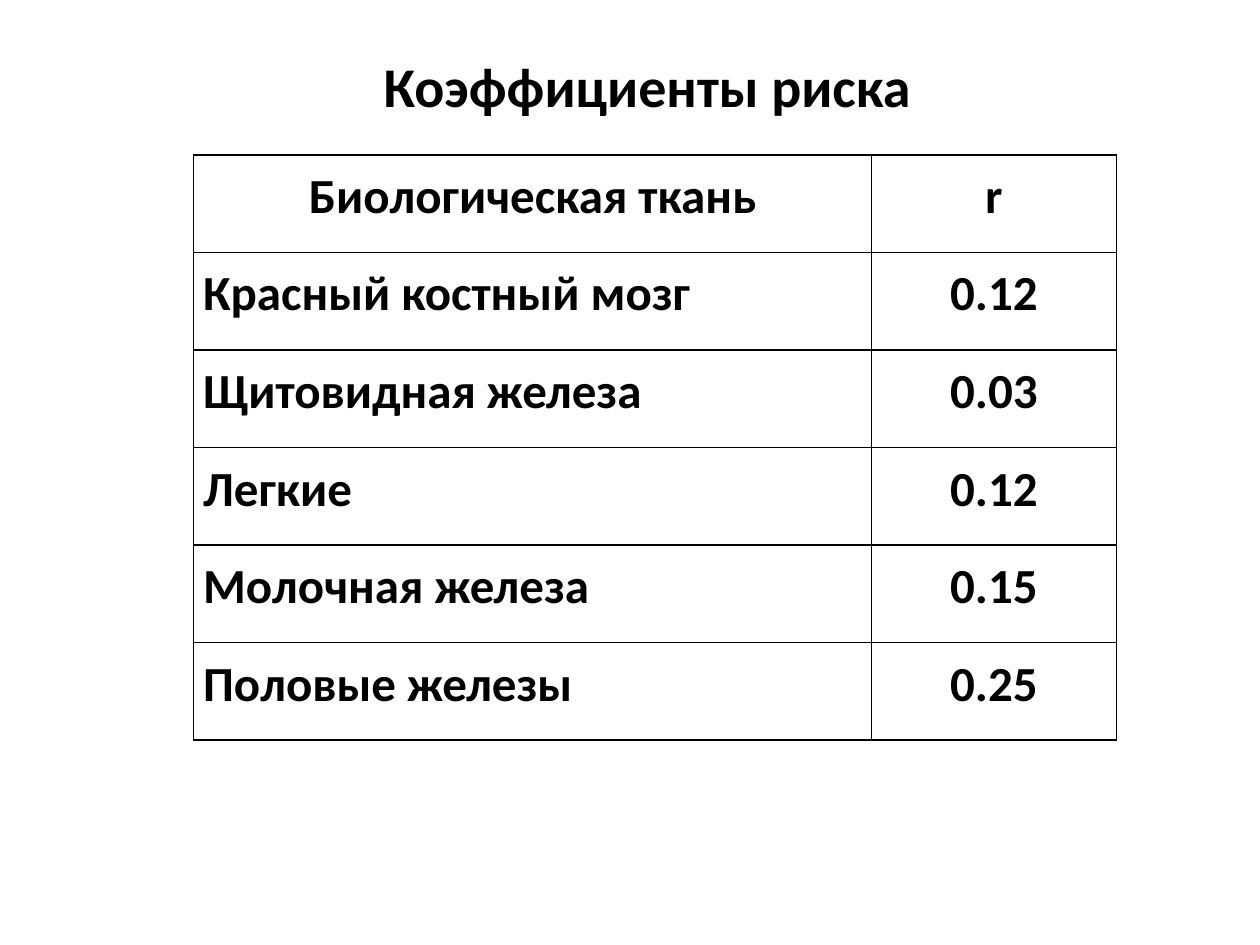
from dataclasses import dataclass

from lxml.etree import SubElement
from pptx import Presentation
from pptx.dml.color import RGBColor
from pptx.enum.text import MSO_ANCHOR, MSO_AUTO_SIZE, PP_ALIGN as Align
from pptx.oxml.ns import qn
from pptx.util import Pt


@dataclass(frozen=True)
class Theme:
    font: str = "Calibri"
    ink: str = "000000"
    paper: str = "FFFFFF"
    title_size: float = 32
    table_size: float = 28
    rule_width: float = 1


THEME = Theme()
TITLE = "Коэффициенты риска"
HEADINGS = ("Биологическая ткань", "r")
RISKS = (
    ("Красный костный мозг", "0.12"),
    ("Щитовидная железа", "0.03"),
    ("Легкие", "0.12"),
    ("Молочная железа", "0.15"),
    ("Половые железы", "0.25"),
)
COLUMN_WIDTHS = (387.2, 140.2)
ROW_HEIGHT = 55.75


def apply_format(target, values):
    for name, value in values.items():
        setattr(target, name, value)


def write(frame, text, size, align, line_spacing=None):
    paragraph = frame.paragraphs[0]
    apply_format(paragraph, {"alignment": align, "line_spacing": line_spacing})
    run = paragraph.add_run()
    run.text = text
    apply_format(run.font, {"name": THEME.font, "size": Pt(size), "bold": True})
    run.font.color.rgb = RGBColor.from_string(THEME.ink)


def add_title(slide):
    title = slide.shapes.add_textbox(Pt(190), Pt(26), Pt(360), Pt(46))
    apply_format(title.text_frame, {"word_wrap": True, "auto_size": MSO_AUTO_SIZE.SHAPE_TO_FIT_TEXT})
    write(title.text_frame, TITLE, THEME.title_size, Align.CENTER)


def rule_cell(cell):
    """Draw a solid border on all four sides."""
    properties = cell._tc.get_or_add_tcPr()
    for side in ("a:lnL", "a:lnR", "a:lnT", "a:lnB"):
        line = SubElement(properties, qn(side), w=str(Pt(THEME.rule_width)))
        fill = SubElement(line, qn("a:solidFill"))
        SubElement(fill, qn("a:srgbClr"), val=THEME.ink)


def fill_cell(cell, text, align):
    rule_cell(cell)
    cell.fill.solid()
    cell.fill.fore_color.rgb = RGBColor.from_string(THEME.paper)
    apply_format(cell, {
        "margin_left": Pt(5.4), "margin_right": Pt(5.4),
        "margin_top": 0, "margin_bottom": 0,
        "vertical_anchor": MSO_ANCHOR.TOP,
    })
    write(cell.text_frame, text, THEME.table_size, align, line_spacing=1.2)


def add_risk_table(slide):
    rows = (HEADINGS, *RISKS)
    table = slide.shapes.add_table(
        len(rows), len(HEADINGS), Pt(110.7), Pt(88.5),
        Pt(sum(COLUMN_WIDTHS)), Pt(ROW_HEIGHT * len(rows)),
    ).table
    for column, width in zip(table.columns, COLUMN_WIDTHS):
        column.width = Pt(width)
    for r, texts in enumerate(rows):
        table.rows[r].height = Pt(ROW_HEIGHT)
        for c, text in enumerate(texts):
            is_tissue_name = r > 0 and c == 0
            fill_cell(table.cell(r, c), text, Align.JUSTIFY if is_tissue_name else Align.CENTER)


def main():
    deck = Presentation()
    apply_format(deck, {"slide_width": Pt(720), "slide_height": Pt(540)})
    slide = deck.slides.add_slide(deck.slide_layouts[6])
    add_risk_table(slide)
    add_title(slide)
    deck.save("out.pptx")


if __name__ == "__main__":
    main()
